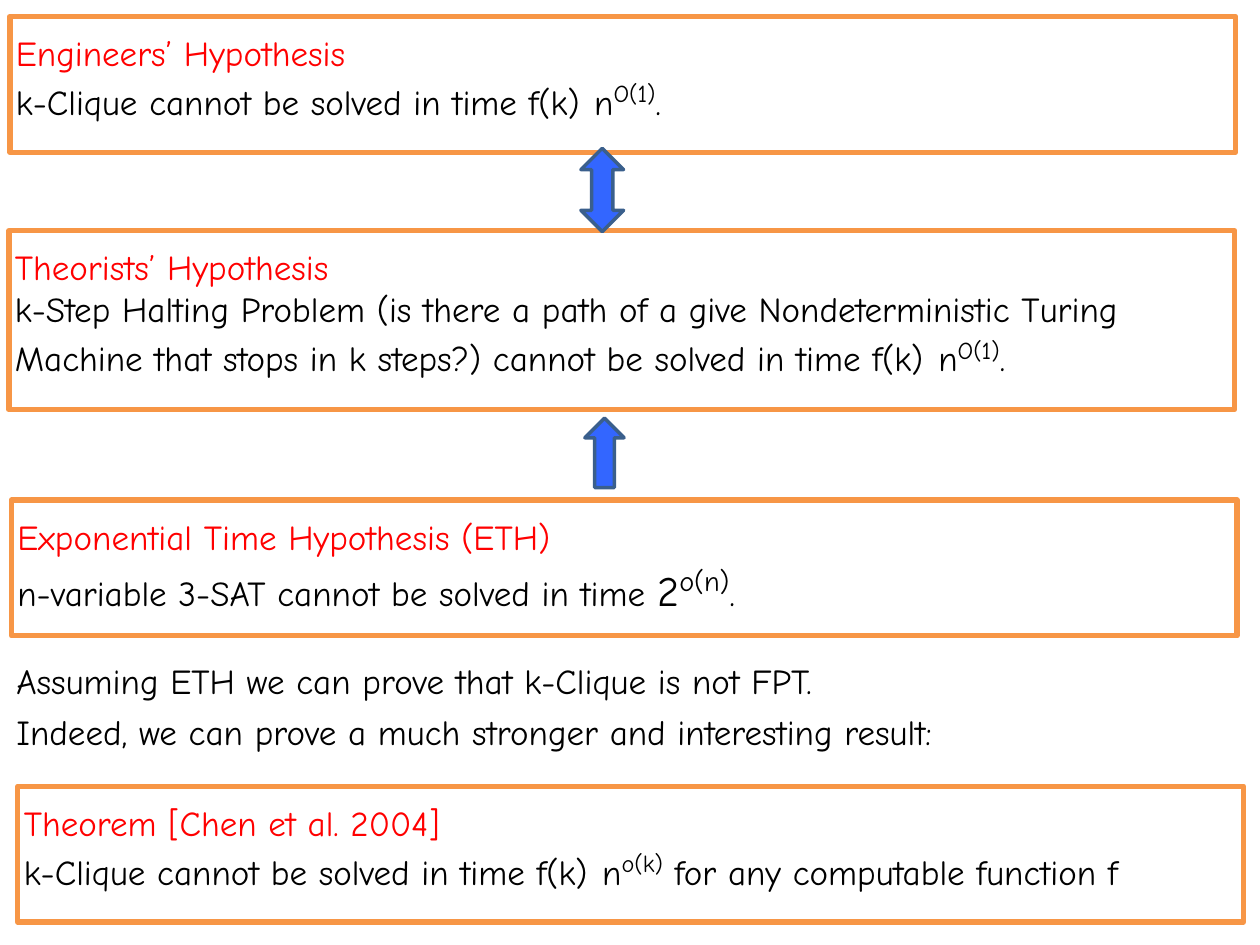
from pptx import Presentation
from pptx.dml.color import RGBColor
from pptx.enum.shapes import MSO_SHAPE
from pptx.enum.text import MSO_AUTO_SIZE
from pptx.util import Cm, Pt

FONT = "Comic Neue"
BLACK = RGBColor(0x00, 0x00, 0x00)
RED = RGBColor(0xFF, 0x00, 0x00)
ORANGE = RGBColor(0xF7, 0x96, 0x46)
BLUE = RGBColor(0x33, 0x66, 0xFF)
DARK_BLUE = RGBColor(0x3A, 0x5F, 0x8C)

BODY_SIZE = 20
FRAME_WIDTH = 24.71
TEXT_WIDTH = 25.22
INDENT, DROP = -0.13, 0.18


def power(exponent):
    return [(" ", 24, False), ("n", BODY_SIZE, False), (exponent, 24, True)]


def body(words):
    return (words, BODY_SIZE, False)


STATEMENTS = [
    (0.2, 0.33, 2.74, 2.13, "Engineers’ Hypothesis",
     [body("k-Clique cannot be solved in time f(k)"), *power("O(1)"), body(".")]),
    (0.18, 4.65, 3.61, 3.0, "Theorists’ Hypothesis",
     [body("k-Step Halting Problem (is there a path of a give Nondeterministic "
           "Turing Machine that stops in k steps?) cannot be solved in time f(k)"),
      *power("O(1)"), body(".")]),
    (0.23, 10.08, 2.74, 2.13, "Exponential Time Hypothesis (ETH)",
     [body("n-variable 3-SAT cannot be solved in time "),
      ("2", 24, False), ("o(n)", 28, True), body(".")]),
    (0.36, 15.85, 2.74, 2.13, "Theorem [Chen et al. 2004]",
     [body("k-Clique cannot be solved in time f(k)"), *power("o(k)"),
      body(" for any computable function f")]),
]
REMARKS = [
    (13.18, "Assuming ETH we can prove that k-Clique is not FPT."),
    (14.2, "Indeed, we can prove a much stronger and interesting result:"),
]
IMPLICATIONS = [
    (MSO_SHAPE.LEFT_RIGHT_ARROW, 11.3, 3.4, 1.68, 0.86, 90),
    (MSO_SHAPE.DOWN_ARROW, 11.79, 8.43, 0.79, 1.4, 180),
]


def add_text(slide, left, top, height, lines):
    box = slide.shapes.add_textbox(Cm(left), Cm(top), Cm(TEXT_WIDTH), Cm(height))
    frame = box.text_frame
    frame.word_wrap = True
    frame.auto_size = MSO_AUTO_SIZE.SHAPE_TO_FIT_TEXT
    for index, (color, pieces) in enumerate(lines):
        paragraph = frame.add_paragraph() if index else frame.paragraphs[0]
        for words, size, raised in pieces:
            run = paragraph.add_run()
            run.text = words
            run.font.name = FONT
            run.font.size = Pt(size)
            run.font.color.rgb = color
            if raised:
                run._r.get_or_add_rPr().set("baseline", "30000")


def add_outlined(slide, kind, left, top, width, height, color, weight):
    outlined = slide.shapes.add_shape(kind, Cm(left), Cm(top), Cm(width), Cm(height))
    outlined.shadow.inherit = False
    outlined.line.color.rgb = color
    outlined.line.width = Pt(weight)
    return outlined


def main():
    deck = Presentation()
    deck.slide_width, deck.slide_height = Cm(25.4), Cm(19.05)
    slide = deck.slides.add_slide(deck.slide_layouts[6])

    for left, top, height, text_height, heading, claim in STATEMENTS:
        add_text(slide, left + INDENT, top + DROP, text_height,
                 [(RED, [body(heading)]), (BLACK, claim)])
        frame = add_outlined(slide, MSO_SHAPE.RECTANGLE, left, top,
                             FRAME_WIDTH, height, ORANGE, 3)
        frame.fill.background()

    for kind, left, top, width, height, angle in IMPLICATIONS:
        arrow = add_outlined(slide, kind, left, top, width, height, DARK_BLUE, 2)
        arrow.fill.solid()
        arrow.fill.fore_color.rgb = BLUE
        arrow.rotation = angle

    for top, remark in REMARKS:
        add_text(slide, 0.08, top, 1.11, [(BLACK, [body(remark)])])

    deck.save("out.pptx")


if __name__ == "__main__":
    main()
